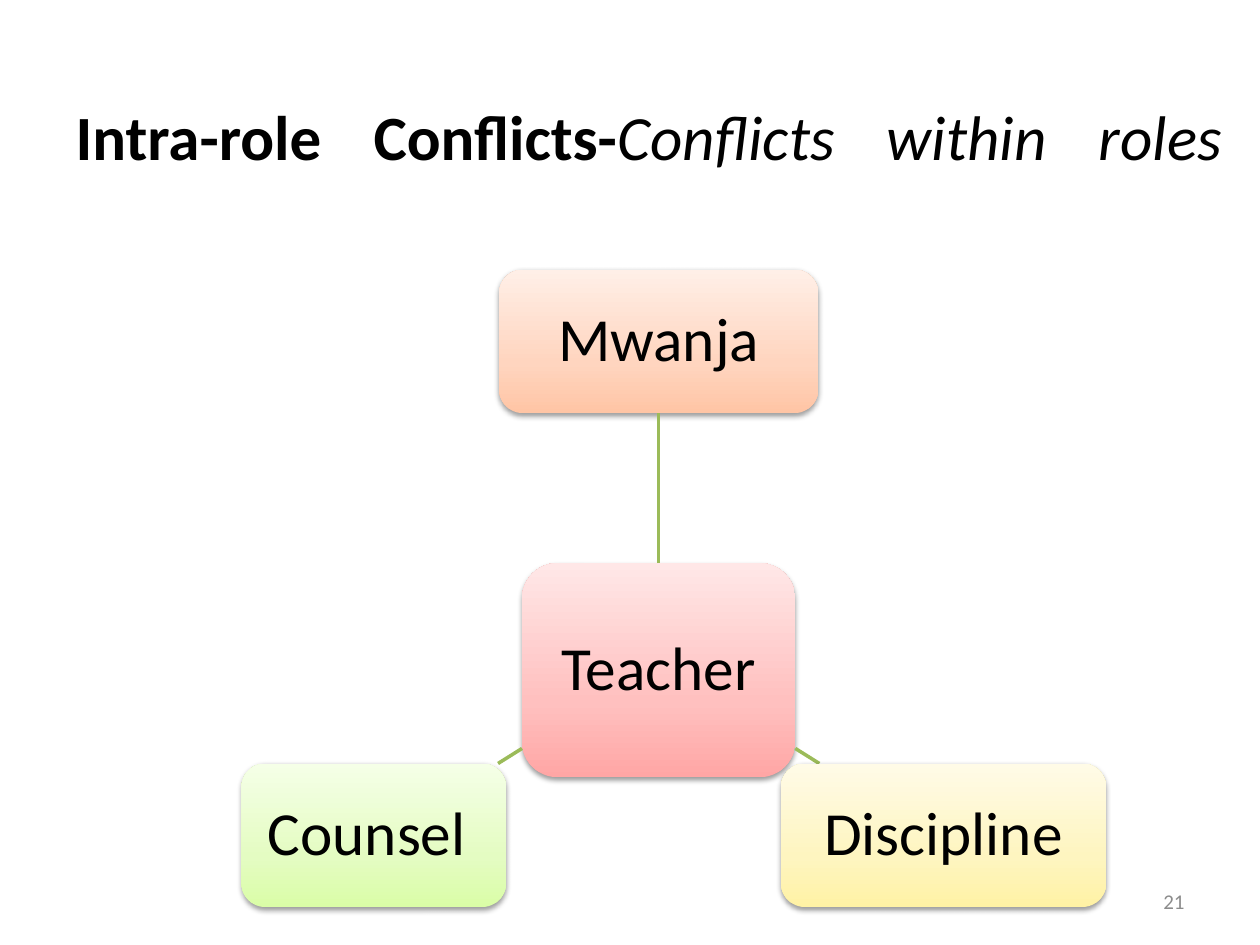
from dataclasses import dataclass

import lxml.etree
import pptx
import pptx.dml.color
import pptx.enum.shapes
import pptx.enum.text
import pptx.oxml
import pptx.oxml.ns
import pptx.shapes.autoshape
import pptx.shapes.connector
import pptx.slide
import pptx.text.text
import pptx.util

Pt = pptx.util.Pt
RGBColor = pptx.dml.color.RGBColor
Align = pptx.enum.text.PP_ALIGN
Anchor = pptx.enum.text.MSO_ANCHOR
qn = pptx.oxml.ns.qn


@dataclass(frozen=True)
class Theme:
    font: str = "Calibri"
    text: str = "000000"
    muted: str = "8C8C8C"
    line: str = "9BBB59"
    title_size: float = 36
    title_break_size: float = 39.6
    role_size: float = 35
    number_size: float = 12
    line_width: float = 2


@dataclass(frozen=True)
class Role:
    label: str
    center: float
    top: float
    width: float
    height: float
    gradient: tuple[str, str, str]


THEME = Theme()
CENTER = 376.4
SPREAD = 162.8
DUTY_TOP = 436.3
DUTY_HEIGHT = 82
TEACHER = Role("Teacher", CENTER, 321.8, 156.2, 122.4, ("FFA6A5", "FFC0BF", "FFE7E7"))
MWANJA = Role("Mwanja", CENTER, 154.1, 182.4, DUTY_HEIGHT, ("FFC5A5", "FFD5BF", "FFEFE7"))
DISCIPLINE = Role("Discipline", CENTER + SPREAD, DUTY_TOP, 185.8, DUTY_HEIGHT,
                  ("FFF2A5", "FEF5C0", "FFFBE7"))
COUNSEL = Role("Counsel ", CENTER - SPREAD, DUTY_TOP, 151.2, DUTY_HEIGHT,
               ("DAFDA7", "E4FCC2", "F5FFE7"))
GRADIENT_POSITIONS = (0, 35, 100)
SPOKE_TOP = 427.7
SPOKE_REACH = 13.7


def set_font(font: pptx.text.text.Font, size: float, color: str) -> None:
    font.name = THEME.font
    font.size = Pt(size)
    font.color.rgb = RGBColor.from_string(color)


def add_title(slide: pptx.slide.Slide) -> None:
    title = slide.shapes.title
    title.left, title.top, title.width, title.height = Pt(36), Pt(21.6), Pt(669.6), Pt(106.6)
    frame = title.text_frame
    frame.auto_size = pptx.enum.text.MSO_AUTO_SIZE.NONE
    frame.vertical_anchor = Anchor.MIDDLE
    paragraph = frame.paragraphs[0]
    paragraph.alignment = Align.JUSTIFY
    paragraph.add_line_break()
    for text, bold in (("Intra-role Conflicts-", True), ("Conflicts within roles", False)):
        run = paragraph.add_run()
        run.text = text
        set_font(run.font, THEME.title_size, THEME.text)
        run.font.bold = bold
        run.font.italic = not bold
    paragraph.add_line_break()
    breaks = paragraph._p.findall(qn("a:br"))
    for line_break, size in zip(breaks, (THEME.title_break_size, THEME.title_size)):
        lxml.etree.SubElement(line_break, qn("a:rPr"), sz=str(round(size * 100)))


def fill_gradient(shape: pptx.shapes.autoshape.Shape, colors: tuple[str, str, str]) -> None:
    shape.fill.gradient()
    gradient = shape._element.spPr.find(qn("a:gradFill"))
    stops = gradient.find(qn("a:gsLst"))
    for stop in list(stops):
        stops.remove(stop)
    for position, color in zip(GRADIENT_POSITIONS, colors):
        stop = lxml.etree.SubElement(stops, qn("a:gs"), pos=str(position * 1000))
        lxml.etree.SubElement(stop, qn("a:srgbClr"), val=color)
    gradient.find(qn("a:lin")).set("ang", str(270 * 60000))


def add_soft_shadow(shape: pptx.shapes.autoshape.Shape) -> None:
    shape.shadow.inherit = False
    effects = shape._element.spPr.find(qn("a:effectLst"))
    shadow = lxml.etree.SubElement(effects, qn("a:outerShdw"), blurRad=str(Pt(3.1)),
                                   dist=str(Pt(1.6)), dir=str(90 * 60000), rotWithShape="0")
    color = lxml.etree.SubElement(shadow, qn("a:srgbClr"), val="000000")
    lxml.etree.SubElement(color, qn("a:alpha"), val="38000")


def add_role(slide: pptx.slide.Slide, role: Role) -> pptx.shapes.autoshape.Shape:
    shape = slide.shapes.add_shape(
        pptx.enum.shapes.MSO_SHAPE.ROUNDED_RECTANGLE,
        Pt(role.center - role.width / 2), Pt(role.top), Pt(role.width), Pt(role.height))
    fill_gradient(shape, role.gradient)
    shape.line.fill.background()
    add_soft_shadow(shape)
    frame = shape.text_frame
    frame.word_wrap = True
    frame.vertical_anchor = Anchor.MIDDLE
    frame.margin_left = frame.margin_right = frame.margin_top = frame.margin_bottom = Pt(7.2)
    paragraph = frame.paragraphs[0]
    paragraph.text = role.label
    paragraph.alignment = Align.CENTER
    paragraph.line_spacing = 0.9
    set_font(paragraph.font, THEME.role_size, THEME.text)
    return shape


def add_spoke(slide: pptx.slide.Slide, start: tuple[float, float],
              end: tuple[float, float]) -> pptx.shapes.connector.Connector:
    connector = slide.shapes.add_connector(
        pptx.enum.shapes.MSO_CONNECTOR.STRAIGHT, *(Pt(value) for value in start + end))
    connector.line.color.rgb = RGBColor.from_string(THEME.line)
    connector.line.width = Pt(THEME.line_width)
    lxml.etree.SubElement(connector._element.spPr, qn("a:effectLst"))
    return connector


def add_slide_number(slide: pptx.slide.Slide, number: str) -> None:
    box = slide.shapes.add_textbox(Pt(516), Pt(500.5), Pt(168), Pt(28.8))
    frame = box.text_frame
    frame.word_wrap = True
    frame.vertical_anchor = Anchor.MIDDLE
    paragraph = frame.paragraphs[0]
    paragraph.text = number
    paragraph.alignment = Align.RIGHT
    set_font(paragraph.font, THEME.number_size, THEME.muted)


def main() -> None:
    presentation = pptx.Presentation()
    presentation.slide_width, presentation.slide_height = Pt(720), Pt(540)
    slide = presentation.slides.add_slide(presentation.slide_layouts[5])
    add_title(slide)
    teacher = add_role(slide, TEACHER)
    mwanja = add_role(slide, MWANJA)
    upright = add_spoke(slide, (CENTER, TEACHER.top), (CENTER, MWANJA.top + MWANJA.height))
    upright.begin_connect(teacher, 0)
    upright.end_connect(mwanja, 2)
    for duty, side in ((DISCIPLINE, 1), (COUNSEL, -1)):
        edge = CENTER + side * TEACHER.width / 2
        add_spoke(slide, (edge, SPOKE_TOP), (edge + side * SPOKE_REACH, DUTY_TOP))
        add_role(slide, duty)
    add_slide_number(slide, "21")
    presentation.save("out.pptx")


if __name__ == "__main__":
    main()
